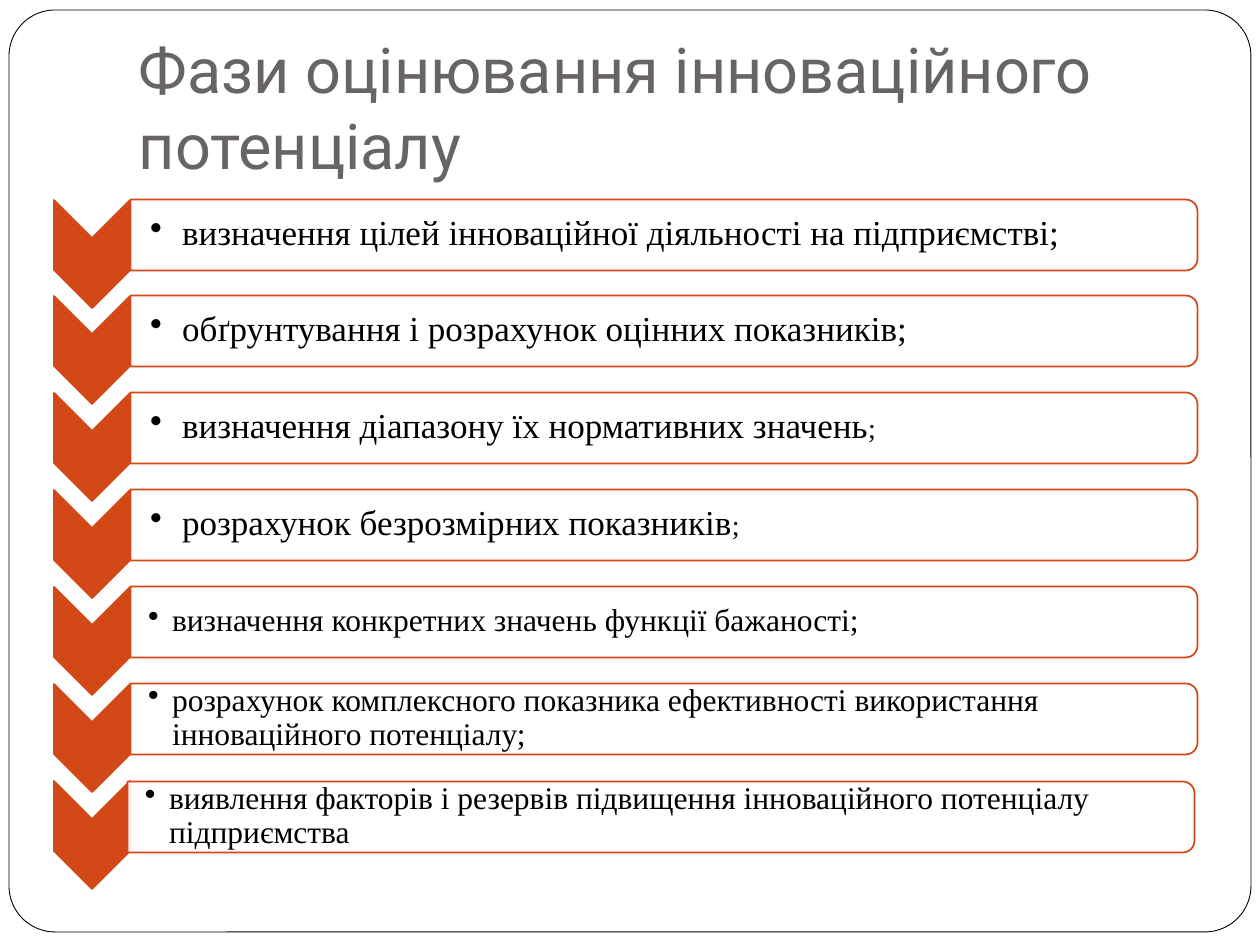
from dataclasses import dataclass

from lxml.etree import SubElement
from pptx import Presentation
from pptx.dml.color import RGBColor as Rgb
from pptx.enum.shapes import MSO_SHAPE as Kind
from pptx.enum.text import MSO_ANCHOR as Anchor, MSO_AUTO_SIZE as Fit, PP_ALIGN as Align
from pptx.oxml.ns import qn
from pptx.util import Emu, Pt

SCALE = 914400 / 126


def px(num):
    return Emu(round(num * SCALE))


@dataclass(frozen=True)
class Theme:
    white: Rgb = Rgb(0xFF, 0xFF, 0xFF)
    black: Rgb = Rgb(0, 0, 0)
    gray: Rgb = Rgb(0x69, 0x64, 0x64)
    rust: Rgb = Rgb(0xD3, 0x48, 0x17)
    head: str = "Roboto"
    body: str = "Times New Roman"
    title: int = 36
    large: int = 20
    small: int = 18
    tail: int = 16


class Page:
    def __init__(self, deck, theme):
        self.theme = theme
        self.slide = deck.slides.add_slide(deck.slide_layouts[5])
        self.shapes = self.slide.shapes

    def style(self, run, font, size, color):
        run.font.name = font
        run.font.size = Pt(size)
        run.font.color.rgb = color

    def inset(self, frame, left, top, right, bottom):
        frame.margin_left, frame.margin_top = px(left), px(top)
        frame.margin_right, frame.margin_bottom = px(right), px(bottom)

    def shape(self, kind, box, fill, line, width=1):
        item = self.shapes.add_shape(kind, *map(px, box))
        item.shadow.inherit = False
        item.fill.solid()
        item.fill.fore_color.rgb = fill
        item.line.color.rgb = line
        item.line.width = Pt(width)
        return item

    def turned(self, kind, mid, size, fill):
        """Add a shape, turned by 90 degrees around its middle."""
        (x, y), (wide, high) = mid, size
        box = (x - wide / 2, y - high / 2, wide, high)
        item = self.shape(kind, box, fill, self.theme.rust)
        item.rotation = 90
        return item

    def border(self):
        t = self.theme
        item = self.shape(Kind.ROUNDED_RECTANGLE, (9, 10, 1242, 922), t.white, t.black, 0.5)
        item.adjustments[0] = 0.05
        tree = item._element.getparent()
        tree.insert(2, item._element)  # behind the title

    def title(self, text):
        t, item = self.theme, self.shapes.title
        item.left, item.top, item.width, item.height = map(px, (126, 38, 1071, 157))
        frame = item.text_frame
        frame.text = text
        frame.auto_size = Fit.NONE
        frame.word_wrap = True
        frame.vertical_anchor = Anchor.BOTTOM
        self.inset(frame, 13, 6, 13, 13)
        para = frame.paragraphs[0]
        para.alignment = Align.LEFT
        self.style(para.runs[0], t.head, t.title, t.gray)

    def arrow(self, y):
        self.turned(Kind.CHEVRON, (92, y), (108, 76), self.theme.rust)

    def bar(self, x, y):
        item = self.turned(Kind.ROUND_2_SAME_RECTANGLE, (x, y), (71, 1067), self.theme.white)
        color = item._element.spPr.find(qn("a:solidFill"))[0]
        SubElement(color, qn("a:alpha")).set("val", "90000")

    def label(self, x, y, text, size, tail):
        t = self.theme
        left, hang = (20, 32) if size == t.large else (18, 24)
        frame = self.shapes.add_textbox(*map(px, (x, y, 1063, 63))).text_frame
        frame.word_wrap = True
        frame.vertical_anchor = Anchor.MIDDLE
        self.inset(frame, left, 1, 1, 1)
        para = frame.paragraphs[0]
        para.text = text
        para.line_spacing = 0.9
        self.style(para.runs[0], t.body, size, t.black)
        if tail:
            run = para.add_run()
            run.text = tail
            self.style(run, t.body, t.tail, t.black)
        self.bullet(para, hang)

    def bullet(self, para, hang):
        props = para._p.get_or_add_pPr()
        props.set("marL", str(px(hang)))
        props.set("indent", str(-px(hang)))
        SubElement(props, qn("a:buChar")).set("char", "•")


def main():
    theme = Theme()
    deck = Presentation()
    deck.slide_width, deck.slide_height = px(1260), px(945)
    page = Page(deck, theme)
    page.border()
    page.title("Фази оцінювання інноваційного потенціалу")

    large, small = theme.large, theme.small
    phases = [
        ("визначення цілей інноваційної діяльності на підприємстві;", large, ""),
        ("обґрунтування і розрахунок оцінних показників;", large, ""),
        ("визначення діапазону їх нормативних значень", large, ";"),
        ("розрахунок безрозмірних показників", large, ";"),
        ("визначення конкретних значень функції бажаності;", small, ""),
        ("розрахунок комплексного показника ефективності використання "
         "інноваційного потенціалу;", small, ""),
        ("виявлення факторів і резервів підвищення інноваційного потенціалу "
         "підприємства", small, ""),
    ]
    last = len(phases) - 1
    for i, (text, size, tail) in enumerate(phases):
        y = 235 + 581 * i // last
        dx, dy = (-3, 1) if i == last else (0, 0)  # the last bar sits slightly off the grid
        page.arrow(y + 19)
        page.bar(664 + dx, y + dy)
        page.label(130 + dx, y - 32 + dy, text, size, tail)
    deck.save("out.pptx")


if __name__ == "__main__":
    main()
